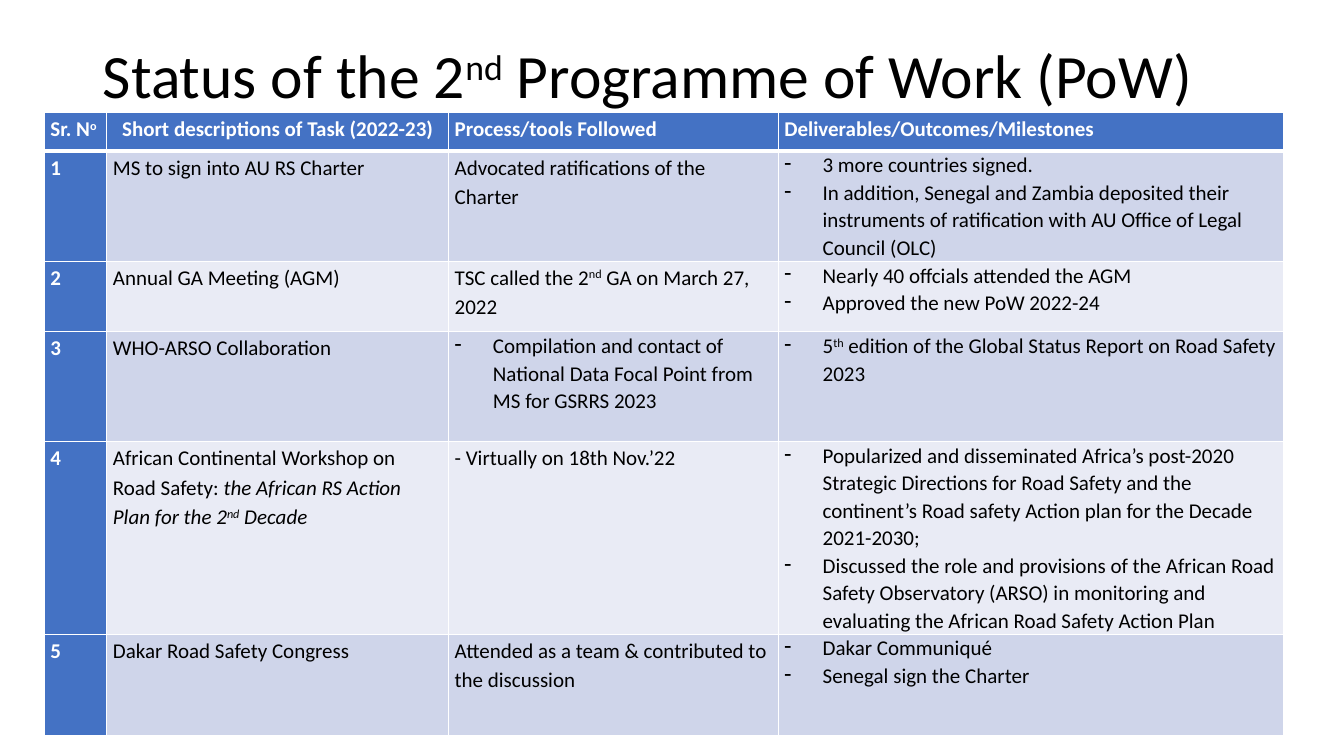
from lxml import etree
from pptx import Presentation
from pptx.dml.color import RGBColor
from pptx.enum.text import MSO_ANCHOR, PP_ALIGN
from pptx.oxml.ns import qn
from pptx.util import Pt

TOP, LEFT, CENTER = MSO_ANCHOR.TOP, PP_ALIGN.LEFT, PP_ALIGN.CENTER
PX = 9144  # 100 px to the inch
TITLE_ONLY = 5

THEME = {
    "font": "Calibri", "title_size": 44, "table_size": 15,
    "text": "000000", "white": "FFFFFF", "accent": "4472C4",
    "bands": ["CFD5EA", "E9EBF5"],
}

# Text marks: ^superscript^ and _italic_; a list becomes dash bullets
HEADER = ["Sr. N^o^", "Short descriptions of Task (2022-23)",
          "Process/tools Followed", "Deliverables/Outcomes/Milestones"]
TASKS = [
    ["MS to sign into AU RS Charter",
     "Advocated ratifications of the Charter",
     ["3 more countries signed.",
      "In addition, Senegal and Zambia deposited their instruments of "
      "ratification with AU Office of Legal Council (OLC)"]],
    ["Annual GA Meeting (AGM)",
     "TSC called the 2^nd^ GA on March 27, 2022",
     ["Nearly 40 offcials attended the AGM",
      "Approved the new PoW 2022-24"]],
    ["WHO-ARSO Collaboration",
     ["Compilation and contact of National Data Focal Point from MS for GSRRS 2023"],
     ["5^th^ edition of the Global Status Report on Road Safety 2023"]],
    ["African Continental Workshop on Road Safety: "
     "_the African RS Action Plan for the 2^nd^ Decade_",
     "- Virtually on 18th Nov.’22",
     ["Popularized and disseminated Africa’s post-2020 Strategic Directions for "
      "Road Safety and the continent’s Road safety Action plan for the Decade 2021-2030;",
      "Discussed the role and provisions of the African Road Safety Observatory (ARSO) "
      "in monitoring and evaluating the African Road Safety Action Plan"]],
    ["Dakar Road Safety Congress",
     "Attended as a team & contributed to the discussion",
     ["Dakar Communiqué", "Senegal sign the Charter"]],
]
ROWS = [HEADER] + [[str(number), *task] for number, task in enumerate(TASKS, 1)]
COLUMN_WIDTHS = [62, 339, 327, 501]
ROW_HEIGHTS = [38, 88, 70, 109, 182, 101]


def write(paragraph, text, size, color, bold=False):
    for i, phrase in enumerate(text.split("_")):
        for j, piece in enumerate(phrase.split("^")):
            if not piece:
                continue
            run = paragraph.add_run()
            run.text = piece
            formats = {"name": THEME["font"], "size": Pt(size),
                       "bold": bold, "italic": i % 2 == 1}
            for name, value in formats.items():
                setattr(run.font, name, value)
            run.font.color.rgb = RGBColor.from_string(color)
            if j % 2:
                run.font._element.set("baseline", "30000")


def add_border(cell, side, points):
    line = etree.SubElement(cell._tc.get_or_add_tcPr(), qn(f"a:ln{side}"),
                            w=str(Pt(points)))
    fill = etree.SubElement(line, qn("a:solidFill"))
    etree.SubElement(fill, qn("a:srgbClr"), val=THEME["white"])


presentation = Presentation()
presentation.slide_width, presentation.slide_height = 1333 * PX, 750 * PX
slide = presentation.slides.add_slide(presentation.slide_layouts[TITLE_ONLY])

# Title
title = slide.shapes.title
for name, value in {"left": 92, "top": 40, "width": 1150, "height": 145}.items():
    setattr(title, name, value * PX)
title.text_frame.vertical_anchor = TOP
paragraph = title.text_frame.paragraphs[0]
paragraph.alignment, paragraph.line_spacing = LEFT, 0.9
write(paragraph, "Status of the 2^nd^ Programme of Work (PoW)",
      THEME["title_size"], THEME["text"])

# Table grid
table = slide.shapes.add_table(
    len(ROWS), len(HEADER), 44 * PX, 112 * PX,
    sum(COLUMN_WIDTHS) * PX, sum(ROW_HEIGHTS) * PX).table
table.first_col = True
for column, width in zip(table.columns, COLUMN_WIDTHS):
    column.width = width * PX
for row, height in zip(table.rows, ROW_HEIGHTS):
    row.height = height * PX

# Table cells
for row_index, row in enumerate(ROWS):
    for column_index, content in enumerate(row):
        cell = table.cell(row_index, column_index)
        heading = row_index == 0 or column_index == 0
        margins = {"margin_left": 6, "margin_right": 6, "margin_top": 0, "margin_bottom": 0}
        for name, value in margins.items():
            setattr(cell, name, value * PX)
        for side in "LRTB":
            under_header = (row_index, side) in [(0, "B"), (1, "T")]
            add_border(cell, side, 3 if under_header else 1)
        cell.fill.solid()
        band = THEME["bands"][(row_index + 1) % 2]
        cell.fill.fore_color.rgb = RGBColor.from_string(THEME["accent"] if heading else band)

        bulleted = isinstance(content, list)
        items = content if bulleted else [content]
        frame = cell.text_frame
        for index, item in enumerate(items):
            paragraph = frame.add_paragraph() if index else frame.paragraphs[0]
            last_space = 8 if index == len(items) - 1 else 0
            formats = {
                "alignment": CENTER if (row_index, column_index) == (0, 1) else LEFT,
                "line_spacing": 1.07 if bulleted else 1.15,
                "space_after": Pt(last_space if bulleted else 10),
            }
            for name, value in formats.items():
                setattr(paragraph, name, value)
            write(paragraph, item, THEME["table_size"],
                  THEME["white"] if heading else THEME["text"], heading)
            if bulleted:
                properties = paragraph._p.get_or_add_pPr()
                properties.set("marL", str(38 * PX))
                properties.set("indent", str(-38 * PX))
                etree.SubElement(properties, qn("a:buChar"), char="-")

presentation.save("out.pptx")
